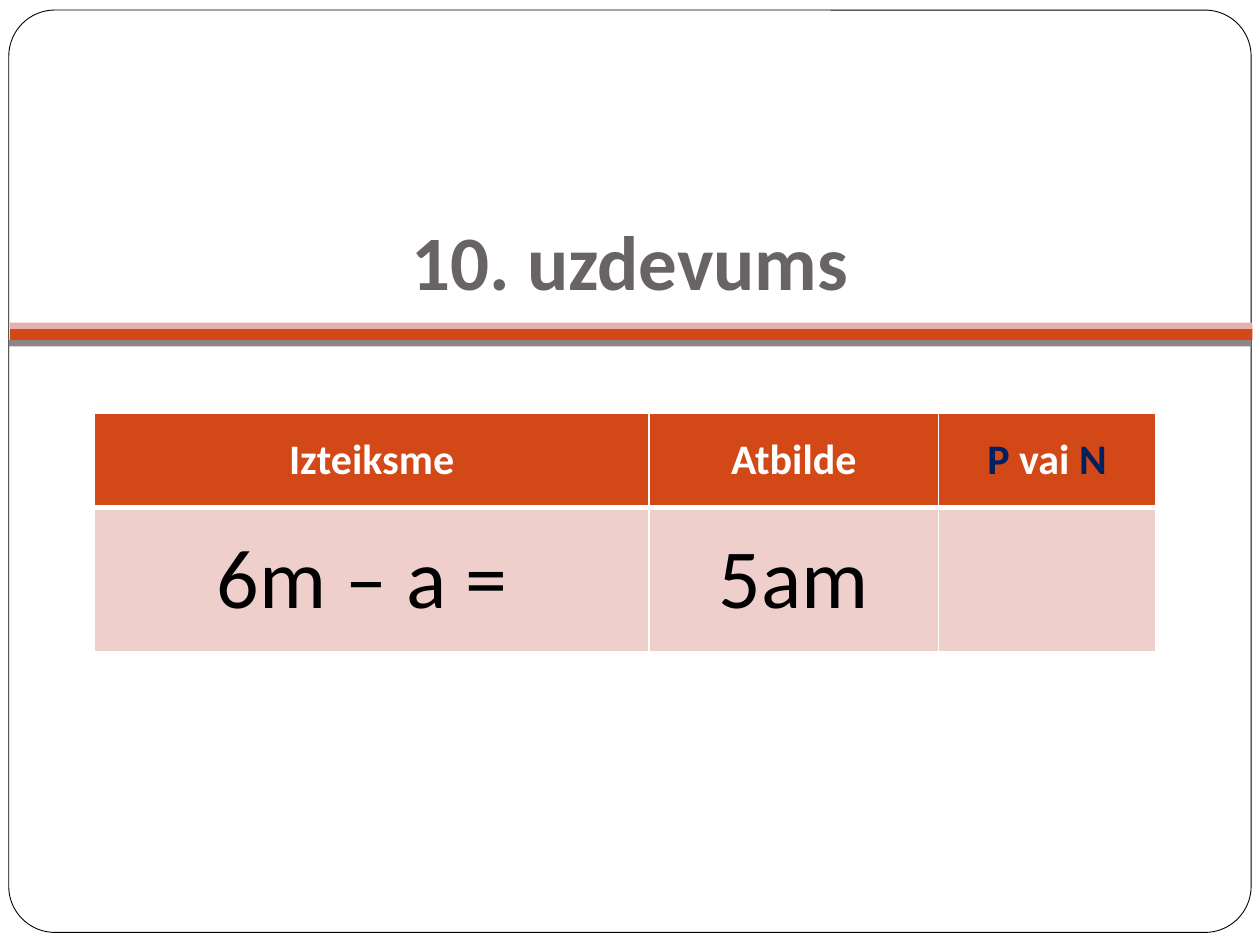
from lxml import etree
from pptx import Presentation
from pptx.dml.color import RGBColor
from pptx.enum import shapes, text
from pptx.oxml.ns import qn
from pptx.util import Inches, Pt

FONT = "Calibri"
WHITE = RGBColor(0xFF, 0xFF, 0xFF)
BLACK = RGBColor(0, 0, 0)
ORANGE = RGBColor(0xD3, 0x48, 0x17)
PINK = RGBColor(0xE6, 0xB1, 0xAC)
PALE_PINK = RGBColor(0xEF, 0xCF, 0xCC)
GREY = RGBColor(0x91, 0x84, 0x85)
DARK_GREY = RGBColor(0x69, 0x64, 0x64)
NAVY = RGBColor(0x00, 0x20, 0x60)


def write(tf, *parts, size, bold=False):
    """Write one centred paragraph from (text, colour) parts."""
    p = tf.paragraphs[0]
    p.alignment = text.PP_ALIGN.CENTER
    for words, color in parts:
        r = p.add_run()
        r.text = words
        r.font.name = FONT
        r.font.size = Pt(size)
        r.font.bold = bold
        r.font.color.rgb = color


def add_block(slide, kind, box, fill, line=None):
    sp = slide.shapes.add_shape(kind, *map(Inches, box))
    sp.shadow.inherit = False
    sp.fill.solid()
    sp.fill.fore_color.rgb = fill
    if line is None:
        sp.line.fill.background()
    else:
        sp.line.color.rgb = line
        sp.line.width = Pt(0.5)
    return sp


def add_frame(slide, left, top, width, height):
    """Draw the rounded panel and the three bands that cross it."""
    panel = add_block(slide, shapes.MSO_SHAPE.ROUNDED_RECTANGLE,
                      (left, top, width, height), WHITE, BLACK)
    panel.adjustments[0] = 0.05
    bands = [(0.01, 2.52, 0.1, ORANGE), (0.01, 2.48, 0.05, PINK),
             (0, 2.62, 0.05, GREY)]
    for dx, dy, thickness, color in bands:
        add_block(slide, shapes.MSO_SHAPE.RECTANGLE,
                  (left + dx, top + dy, width, thickness), color)


def add_title(slide, left, top, width, height):
    title = slide.shapes.title
    title.left, title.top = Inches(left), Inches(top)
    title.width, title.height = Inches(width), Inches(height)
    tf = title.text_frame
    tf.auto_size = text.MSO_AUTO_SIZE.NONE
    tf.vertical_anchor = text.MSO_ANCHOR.BOTTOM
    tf.margin_bottom = Inches(0.1)
    write(tf, ("10. uzdevums", DARK_GREY), size=44, bold=True)
    slide.shapes._spTree.append(title._element)  # bring in front of the panel


def set_borders(cell, **widths):
    """Give the cell white borders; widths are points keyed by L, R, T, B."""
    tcPr = cell._tc.get_or_add_tcPr()
    for i, side in enumerate("LRTB"):
        ln = etree.Element(qn(f"a:ln{side}"), w=str(Pt(widths.get(side, 1))))
        fill = etree.SubElement(ln, qn("a:solidFill"))
        etree.SubElement(fill, qn("a:srgbClr"), val=str(WHITE))
        tcPr.insert(i, ln)


def add_answer_table(slide, left, top):
    col_widths, row_heights = (4.4, 2.3, 1.72), (0.75, 1.14)
    header = [[("Izteiksme", WHITE)], [("Atbilde", WHITE)],
              [("P ", NAVY), ("vai ", WHITE), ("N", NAVY)]]
    answers = [[("6m – a = ", BLACK)], [("5am", BLACK)], []]
    rows = [(header, ORANGE, 24, True, {"B": 3}),
            (answers, PALE_PINK, 48, False, {"T": 3})]

    table = slide.shapes.add_table(
        len(rows), len(col_widths), Inches(left), Inches(top),
        Inches(sum(col_widths)), Inches(sum(row_heights))).table
    for col, width in zip(table.columns, col_widths):
        col.width = Inches(width)
    for row, height, (cells, fill, size, bold, borders) in zip(
            table.rows, row_heights, rows):
        row.height = Inches(height)
        for cell, parts in zip(row.cells, cells):
            cell.fill.solid()
            cell.fill.fore_color.rgb = fill
            cell.vertical_anchor = text.MSO_ANCHOR.MIDDLE
            set_borders(cell, **borders)
            write(cell.text_frame, *parts, size=size, bold=bold)


def main():
    prs = Presentation()
    prs.slide_width, prs.slide_height = Inches(10), Inches(7.5)
    slide = prs.slides.add_slide(prs.slide_layouts[5])
    add_frame(slide, 0.07, 0.08, 9.86, 7.32)
    add_title(slide, 0.04, 1.04, 9.92, 1.49)
    add_answer_table(slide, 0.75, 3.28)
    prs.save("out.pptx")


if __name__ == "__main__":
    main()
